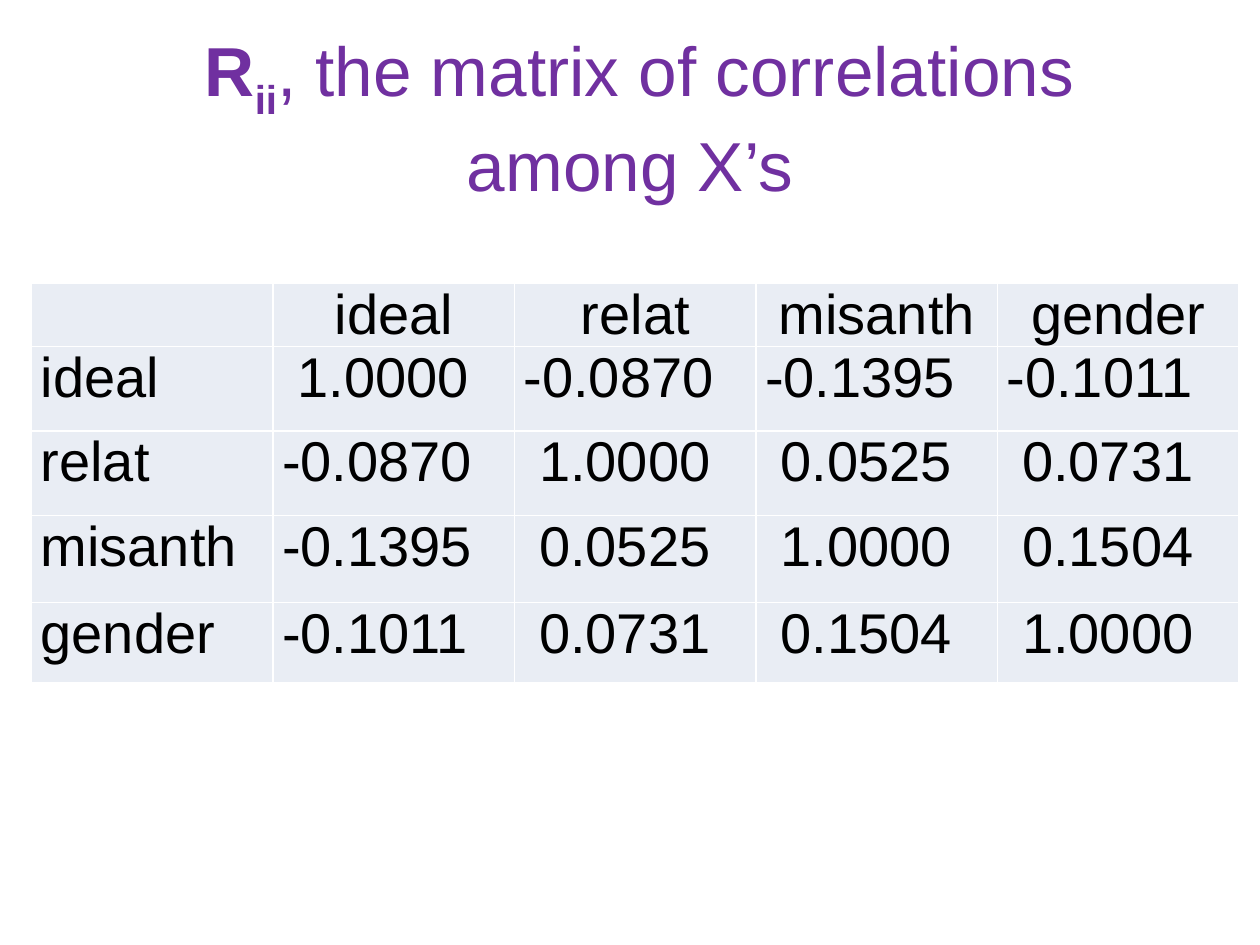
from pptx import Presentation
from pptx import util as u
from pptx.dml.color import RGBColor
from pptx.enum import text

BLACK = RGBColor(0x00, 0x00, 0x00)
PURPLE = RGBColor(0x70, 0x30, 0xA0)
PALE = RGBColor(0xE9, 0xED, 0xF4)

VARIABLES = ["ideal", "relat", "misanth", "gender"]
CORRELATIONS = [
    [1.0, -0.0870, -0.1395, -0.1011],
    [-0.0870, 1.0, 0.0525, 0.0731],
    [-0.1395, 0.0525, 1.0, 0.1504],
    [-0.1011, 0.0731, 0.1504, 1.0],
]
ROW_HEIGHTS = [1.25, 1.7, 1.7, 1.76, 1.62]


class Deck:
    font = "Arial"
    title_size = u.Pt(39.6)
    cell_size = u.Pt(32)

    def __init__(self, width, height):
        self.prs = Presentation()
        self.prs.slide_width, self.prs.slide_height = width, height
        self.s = None

    def add_slide(self):
        self.s = self.prs.slides.add_slide(self.prs.slide_layouts[5])

    def title(self, runs, left, top, width, height):
        """Fill the title; each run is (text, colour, bold, baseline shift in percent)."""
        sp = self.s.shapes.title
        sp.left, sp.top, sp.width, sp.height = left, top, width, height
        tf = sp.text_frame
        tf.word_wrap = True
        tf.auto_size = text.MSO_AUTO_SIZE.NONE
        tf.vertical_anchor = text.MSO_ANCHOR.MIDDLE
        p = tf.paragraphs[0]
        p.alignment = text.PP_ALIGN.CENTER
        p.font.name, p.font.size = self.font, self.title_size
        for words, colour, bold, shift in runs:
            r = p.add_run()
            r.text = words
            r.font.name, r.font.size = self.font, self.title_size
            r.font.color.rgb, r.font.bold = colour, bold
            if shift:
                r.font._element.set("baseline", str(shift * 1000))

    def table(self, rows, left, top, width, heights):
        table = self.s.shapes.add_table(
            len(rows), len(rows[0]), left, top, width, sum(heights)).table
        table.first_row = table.horz_banding = False
        for row, height in zip(table.rows, heights):
            row.height = height
        for i, row in enumerate(rows):
            for j, words in enumerate(row):
                align = text.PP_ALIGN.CENTER if i == 0 else text.PP_ALIGN.LEFT
                self.cell(table.cell(i, j), words, align)

    def cell(self, cell, words, align):
        cell.fill.solid()
        cell.fill.fore_color.rgb = PALE
        cell.margin_left = cell.margin_right = u.Cm(0.18)
        cell.margin_top = cell.margin_bottom = 0
        p = cell.text_frame.paragraphs[0]
        p.text, p.alignment = words, align
        p.font.name, p.font.size = self.font, self.cell_size
        p.font.color.rgb = BLACK


def main():
    deck = Deck(u.Cm(25.4), u.Cm(19.05))
    deck.add_slide()
    deck.title(
        [(" ", BLACK, False, 0),
         ("R", PURPLE, True, 0),
         ("ii", PURPLE, True, -25),
         (", the matrix of correlations among X’s", PURPLE, False, 0)],
        u.Cm(1.27), u.Cm(0.76), u.Cm(22.86), u.Cm(3.18))

    # The space flag keeps positive values in line with negative ones.
    rows = [["", *VARIABLES]]
    for name, values in zip(VARIABLES, CORRELATIONS):
        rows.append([name, *(f"{v: .4f}" for v in values)])
    deck.table(rows, u.Cm(0.64), u.Cm(5.72), u.Cm(24.34),
               [u.Cm(h) for h in ROW_HEIGHTS])
    deck.prs.save("out.pptx")


if __name__ == "__main__":
    main()
